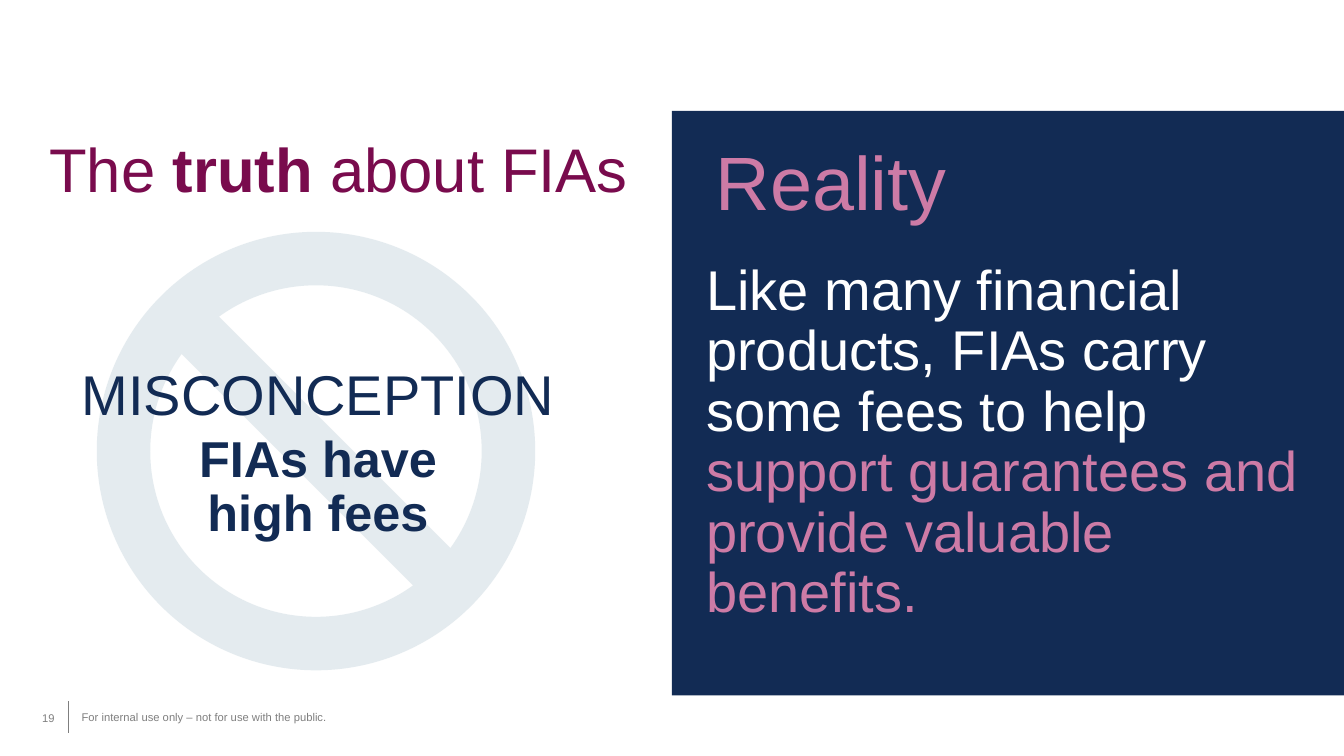
from pptx import Presentation
from pptx.dml.color import RGBColor
from pptx.enum import shapes, text
from pptx.oxml import parse_xml
from pptx.oxml.ns import nsdecls, qn
from pptx.util import Pt

WHITE = RGBColor(0xFF, 0xFF, 0xFF)
NAVY = RGBColor(0x12, 0x2B, 0x54)
PLUM = RGBColor(0x79, 0x0B, 0x4D)
PINK = RGBColor(0xCD, 0x7B, 0xA6)
MIST = RGBColor(0xCB, 0xD9, 0xE0)
GRAY = RGBColor(0x7F, 0x7F, 0x7F)

LEFT, MIDDLE = text.PP_ALIGN.LEFT, text.MSO_ANCHOR.MIDDLE
CENTER = text.PP_ALIGN.CENTER


class Deck:
    font = "Arial"

    def __init__(self, width, height):
        self.prs = Presentation()
        self.prs.slide_width, self.prs.slide_height = Pt(width), Pt(height)

    def add_slide(self):
        self.s = self.prs.slides.add_slide(self.prs.slide_layouts[5])

    def fill_text(self, sp, paras, insets=(0, 0, 0, 0), align=LEFT,
                  anchor=text.MSO_ANCHOR.TOP, spacing=None, gap=0):
        """Fill sp; each paragraph is a list of (text, size, colour, bold) runs."""
        tf = sp.text_frame
        tf.word_wrap = True
        tf.auto_size = text.MSO_AUTO_SIZE.NONE
        tf.vertical_anchor = anchor
        tf.margin_left, tf.margin_top, tf.margin_right, tf.margin_bottom = map(Pt, insets)
        for i, runs in enumerate(paras):
            p = tf.add_paragraph() if i else tf.paragraphs[0]
            p.alignment = align
            if spacing:
                p.line_spacing = spacing
            p.space_before = Pt(gap if i else 0)
            for words, size, color, bold in runs:
                for j, line in enumerate(words.split("\n")):
                    if j:
                        p.add_line_break()
                    r = p.add_run()
                    r.text = line
                    r.font.name, r.font.size = self.font, Pt(size)
                    r.font.bold = bold
                    r.font.color.rgb = color

    def title(self, box, runs):
        sp = self.s.shapes.title
        sp.left, sp.top, sp.width, sp.height = map(Pt, box)
        self.fill_text(sp, [runs], align=CENTER, anchor=text.MSO_ANCHOR.BOTTOM, spacing=0.9)

    def text(self, box, paras, **style):
        self.fill_text(self.s.shapes.add_textbox(*map(Pt, box)), paras, **style)

    def shape(self, kind, box, color):
        sp = self.s.shapes.add_shape(kind, *map(Pt, box))
        sp.shadow.inherit = False
        sp.fill.solid()
        sp.fill.fore_color.rgb = color
        sp.line.fill.background()
        return sp

    def line(self, x1, y1, x2, y2, color, width):
        c = self.s.shapes.add_connector(shapes.MSO_CONNECTOR.STRAIGHT,
                                        *map(Pt, (x1, y1, x2, y2)))
        c.line.color.rgb, c.line.width = color, Pt(width)
        c._element.spPr.append(parse_xml(f"<a:effectLst {nsdecls('a')}/>"))


def set_opacity(sp, percent):
    clr = sp._element.spPr.find(qn("a:solidFill"))[0]
    clr.append(parse_xml(f'<a:alpha {nsdecls("a")} val="{percent * 1000}"/>'))


def main():
    deck = Deck(960, 540)
    deck.add_slide()

    deck.text((58.3, 503.3, 857.5, 18.7),
              [[("For internal use only – not for use with the public.", 8, GRAY, False)]],
              insets=(0, 4.3, 8.6, 4.3))
    deck.line(49, 501, 49, 523.5, GRAY, 0.75)
    deck.text((30.2, 498.2, 28.8, 28.8), [[("19", 8, GRAY, False)]],
              insets=(0, 4.3, 0, 4.3), anchor=MIDDLE)

    ban = deck.shape(shapes.MSO_SHAPE.NO_SYMBOL, (69.1, 165.6, 313.2, 313.2), MIST)
    ban.adjustments[0] = 0.122
    set_opacity(ban, 50)
    deck.title((31, 79.2, 422, 67.7), [("The ", 44, PLUM, False), ("truth", 44, PLUM, True),
                                       (" about FIAs", 44, PLUM, False)])
    deck.text((43.2, 247.7, 360.7, 173.5),
              [[("MISCONCEPTION", 40, NAVY, False)],
               [("FIAs have\nhigh fees", 36, NAVY, True)]],
              insets=(14.4, 14.4, 7.2, 7.2), align=CENTER, spacing=0.9, gap=4.4)

    deck.shape(shapes.MSO_SHAPE.RECTANGLE, (480, 79.2, 480, 417.6), NAVY)
    deck.text((504, 92.9, 181.4, 72.7), [[("Reality", 54, PINK, False)]],
              insets=(7.2, 3.6, 7.2, 3.6))
    deck.text((504.5, 187.2, 434.2, 241.2),
              [[("Like many financial products, FIAs carry some fees to help ", 40, WHITE, False),
                ("support guarantees and provide valuable benefits.", 40, PINK, False)]],
              spacing=0.9)

    deck.prs.save("out.pptx")


if __name__ == "__main__":
    main()
